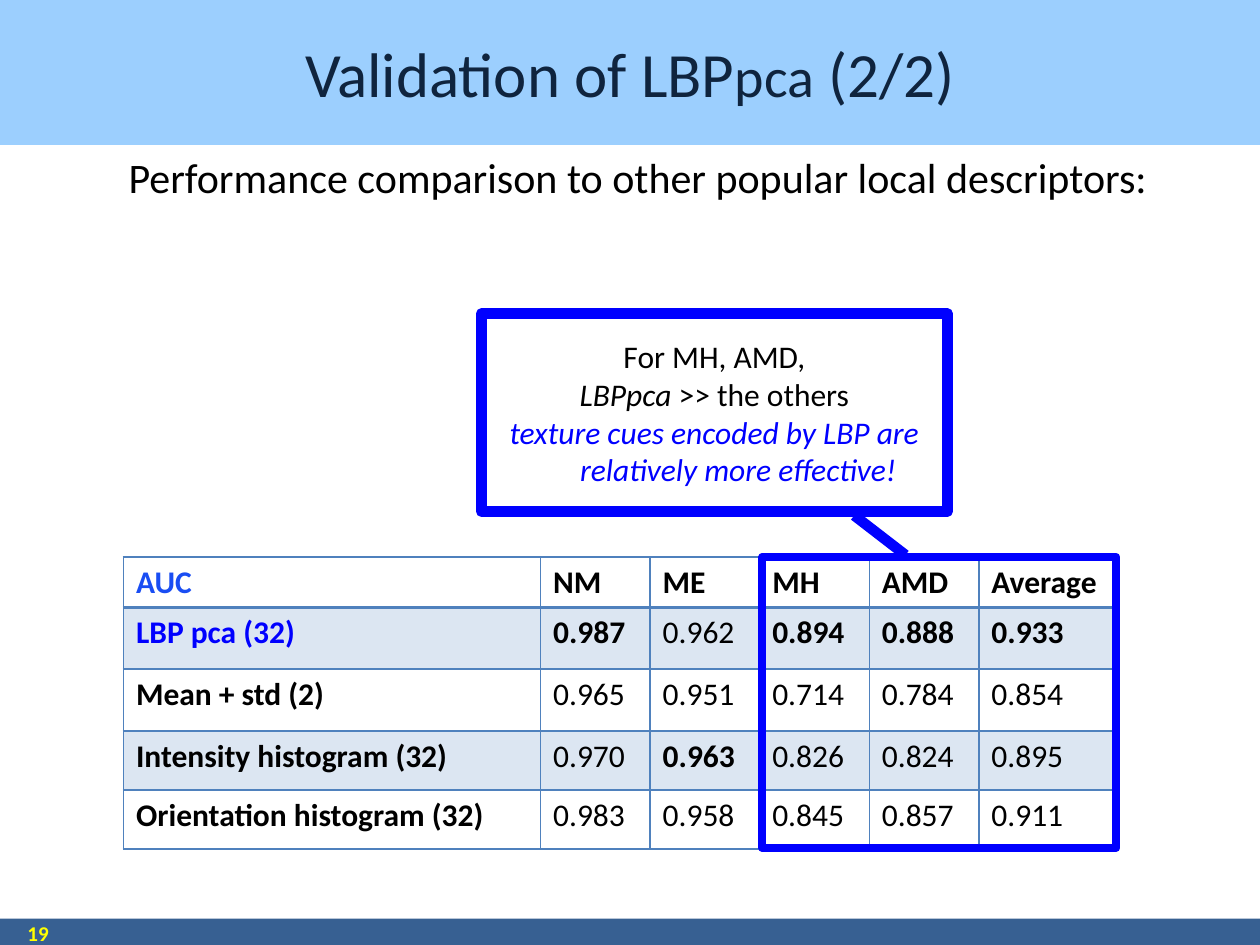
from lxml import etree
from pptx import Presentation
from pptx.dml.color import RGBColor
from pptx.enum.shapes import MSO_SHAPE
from pptx.enum.text import MSO_ANCHOR, MSO_AUTO_SIZE, PP_ALIGN
from pptx.oxml.ns import qn
from pptx.util import Inches, Pt

RECT, CALLOUT = MSO_SHAPE.RECTANGLE, MSO_SHAPE.LINE_CALLOUT_1
MIDDLE, CENTER = MSO_ANCHOR.MIDDLE, PP_ALIGN.CENTER
NO_FIT = MSO_AUTO_SIZE.NONE

BLACK = RGBColor(0x00, 0x00, 0x00)
WHITE = RGBColor(0xFF, 0xFF, 0xFF)
BLUE = RGBColor(0x00, 0x00, 0xFF)
ROYAL = RGBColor(0x19, 0x4D, 0xF3)
NAVY = RGBColor(0x0F, 0x24, 0x3E)
SKY = RGBColor(0x9C, 0xCF, 0xFE)
STEEL = RGBColor(0x37, 0x60, 0x92)
GRID = RGBColor(0x4F, 0x81, 0xBD)
BAND = RGBColor(0xDC, 0xE6, 0xF2)
YELLOW = RGBColor(0xFF, 0xFF, 0x00)


def style(font, size, color, bold=False):
    font.name, font.size, font.bold = "Calibri", Pt(size), bold
    font.color.rgb = color


def border(cell, side, width):
    props = cell._tc.get_or_add_tcPr()
    line = etree.SubElement(props, qn("a:" + side), w=str(Pt(width)))
    fill = etree.SubElement(line, qn("a:solidFill"))
    etree.SubElement(fill, qn("a:srgbClr"), val=str(GRID))


prs = Presentation()
prs.slide_width, prs.slide_height = Inches(10), Inches(7.5)
slide = prs.slides.add_slide(prs.slide_layouts[5])
shapes = slide.shapes

# Title band
title = shapes.title
title.left, title.top = Inches(0), Inches(0)
title.width, title.height = Inches(10), Inches(1.15)
title.fill.solid()
title.fill.fore_color.rgb = SKY
frame = title.text_frame
frame.auto_size = NO_FIT
frame.vertical_anchor = MIDDLE
para = frame.paragraphs[0]
para.alignment = CENTER
style(para.font, 36, NAVY)
for text, size in (("Validation of LBP", 36), ("pca", 32), (" (2/2)", 36)):
    run = para.add_run()
    run.text = text
    run.font.size = Pt(size)

# Footer bar and page number
bar = shapes.add_shape(RECT, Inches(0), Inches(7.29), Inches(10), Inches(0.21))
bar.shadow.inherit = False
bar.fill.solid()
bar.fill.fore_color.rgb = STEEL
bar.line.fill.background()

page = shapes.add_textbox(Inches(0.12), Inches(7.21), Inches(2.33), Inches(0.4))
page.text_frame.vertical_anchor = MIDDLE
page.text_frame.word_wrap = True
para = page.text_frame.paragraphs[0]
para.text = "19"
style(para.font, 12, YELLOW, True)

# Table of scores
rows = [
    ("AUC", "NM", "ME", "MH", "AMD", "Average"),
    ("LBP pca (32)", "0.987", "0.962", "0.894", "0.888", "0.933"),
    ("Mean + std (2)", "0.965", "0.951", "0.714", "0.784", "0.854"),
    ("Intensity histogram (32)", "0.970", "0.963", "0.826", "0.824", "0.895"),
    ("Orientation histogram (32)", "0.983", "0.958", "0.845", "0.857", "0.911"),
]
best = [max(col[1:]) for col in zip(*rows)]
tints = {(0, 0): ROYAL, (1, 0): BLUE}
table = shapes.add_table(len(rows), len(rows[0]), Inches(0.98), Inches(4.42),
                         Inches(7.87), Inches(2.32)).table
for col, width in zip(table.columns, (3.31, 0.87, 0.87, 0.87, 0.87, 1.1)):
    col.width = Inches(width)
for row, height in zip(table.rows, (0.4, 0.49, 0.49, 0.47, 0.47)):
    row.height = Inches(height)
for r, row in enumerate(rows):
    for c, text in enumerate(row):
        cell = table.cell(r, c)
        para = cell.text_frame.paragraphs[0]
        para.text = text
        bold = r == 0 or c == 0 or text == best[c]
        style(para.font, 18, tints.get((r, c), BLACK), bold)
        for side in ("lnL", "lnR"):
            border(cell, side, 1)
        border(cell, "lnT", 2 if r == 1 else 1)
        border(cell, "lnB", 2 if r == 0 else 1)
        if r % 2:
            cell.fill.solid()
            cell.fill.fore_color.rgb = BAND
        else:
            cell.fill.background()

# Frame around the last three columns
focus = shapes.add_shape(RECT, Inches(6.05), Inches(4.42), Inches(2.81), Inches(2.31))
focus.shadow.inherit = False
focus.fill.background()
focus.line.color.rgb = BLUE
focus.line.width = Pt(4.5)

# Callout
note = shapes.add_shape(CALLOUT, Inches(3.82), Inches(2.49), Inches(3.7), Inches(1.57))
for i, value in enumerate((1.22, 0.91, 1.02, 0.8)):
    note.adjustments[i] = value
note.shadow.inherit = False
note.fill.solid()
note.fill.fore_color.rgb = WHITE
note.line.color.rgb = BLUE
note.line.width = Pt(6)
frame = note.text_frame
frame.word_wrap = True
frame.vertical_anchor = MIDDLE
lines = [
    ([("For MH, AMD,", False)], BLACK),
    ([("LBPpca", True), (" >> the others", False)], BLACK),
    ([("texture cues encoded by LBP are\vrelatively more effective!", True)], BLUE),
]
for i, (parts, color) in enumerate(lines):
    para = frame.add_paragraph() if i else frame.paragraphs[0]
    para.alignment = CENTER
    props = para._p.get_or_add_pPr()
    props.set("marL", str(Inches(0.38)))
    props.set("indent", str(-Inches(0.38)))
    style(para.font, 18, color)
    for text, slant in parts:
        for j, piece in enumerate(text.split("\v")):
            if j:
                para.add_line_break()
            run = para.add_run()
            run.text = piece
            run.font.italic = slant

# Heading above the table
head = shapes.add_textbox(Inches(0.24), Inches(1.15), Inches(9.49), Inches(0.5))
head.text_frame.word_wrap = True
head.text_frame.margin_left = Inches(0.78)
para = head.text_frame.paragraphs[0]
para.text = "Performance comparison to other popular local descriptors:"
style(para.font, 24, BLACK)

prs.save("out.pptx")
